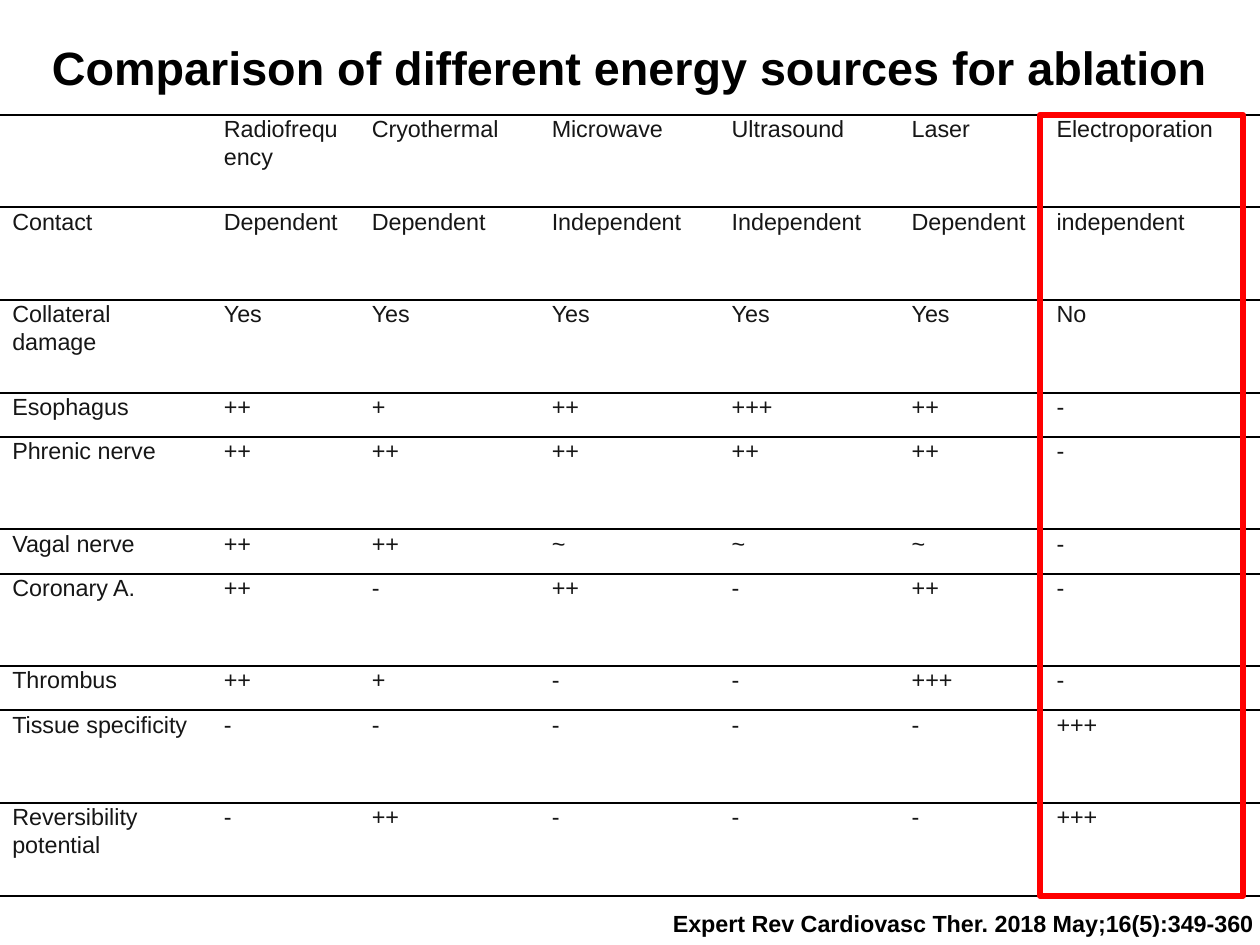
from lxml.etree import SubElement
from pptx import Presentation
from pptx.dml.color import RGBColor
from pptx.enum.shapes import MSO_SHAPE as Shape
from pptx.enum.text import MSO_ANCHOR as Anchor, PP_ALIGN as Align
from pptx.oxml.ns import qn
from pptx.util import Pt

NO_STYLE = "{2D5ABB26-0587-4C30-8999-92F81FD0307C}"
SLIDE_WIDTH, SLIDE_HEIGHT = 540, 405
TABLE_TOP = 49.2
TALL, SHORT = 39.7, 18.95
COLUMN_WIDTHS = [90.7, 63.4, 77.15, 77.15, 77.15, 62.1, 92.35]

# Row height, then the cells of the row
ROWS = [
    (TALL, ["", "Radiofrequency", "Cryothermal", "Microwave", "Ultrasound", "Laser", "Electroporation"]),
    (TALL, ["Contact", "Dependent", "Dependent", "Independent", "Independent", "Dependent", "independent"]),
    (TALL, ["Collateral damage", "Yes", "Yes", "Yes", "Yes", "Yes", "No"]),
    (SHORT, ["Esophagus", "++", "+", "++", "+++", "++", "-"]),
    (TALL, ["Phrenic nerve", "++", "++", "++", "++", "++", "-"]),
    (SHORT, ["Vagal nerve", "++", "++", "~", "~", "~", "-"]),
    (TALL, ["Coronary A.", "++", "-", "++", "-", "++", "-"]),
    (SHORT, ["Thrombus", "++", "+", "-", "-", "+++", "-"]),
    (TALL, ["Tissue specificity", "-", "-", "-", "-", "-", "+++"]),
    (TALL, ["Reversibility potential", "-", "++", "-", "-", "-", "+++"]),
]
TABLE_HEIGHT = sum(height for height, _ in ROWS)


def color(hex_string):
    return RGBColor.from_string(hex_string)


def style_paragraph(paragraph, size, hex_color, align, bold=False):
    paragraph.alignment = align
    font = paragraph.font
    font.name, font.size, font.bold = "Arial", Pt(size), bold
    font.color.rgb = color(hex_color)


def add_text(slide, text, left, top, width, height, size, align, anchor):
    box = slide.shapes.add_textbox(Pt(left), Pt(top), Pt(width), Pt(height))
    frame = box.text_frame
    frame.word_wrap = True
    frame.vertical_anchor = anchor
    frame.text = text
    style_paragraph(frame.paragraphs[0], size, "000000", align, bold=True)


def add_rules(cell):
    """Draw the lines above and below a cell."""
    properties = cell._tc.get_or_add_tcPr()
    for side in ("a:lnT", "a:lnB"):
        line = SubElement(properties, qn(side), w=str(Pt(1)))
        fill = SubElement(line, qn("a:solidFill"))
        SubElement(fill, qn("a:srgbClr"), val="000000")


def fill_cell(cell, text):
    cell.margin_left = cell.margin_right = Pt(5.3)
    cell.margin_top = cell.margin_bottom = 0
    cell.text = text
    paragraph = cell.text_frame.paragraphs[0]
    paragraph.line_spacing = 1.07
    style_paragraph(paragraph, 10, "161616", Align.JUSTIFY)
    add_rules(cell)
    cell.fill.background()


def add_comparison_table(slide):
    frame = slide.shapes.add_table(len(ROWS), len(COLUMN_WIDTHS), 0, Pt(TABLE_TOP),
                                   Pt(SLIDE_WIDTH), Pt(TABLE_HEIGHT))
    table = frame.table
    table.first_row = table.horz_banding = False
    table._tbl.tblPr.find(qn("a:tableStyleId")).text = NO_STYLE
    for column, width in zip(table.columns, COLUMN_WIDTHS):
        column.width = Pt(width)
    for row, (height, texts) in zip(table.rows, ROWS):
        row.height = Pt(height)
        for cell, text in zip(row.cells, texts):
            fill_cell(cell, text)


def add_highlight(slide, left, top, width, height):
    frame = slide.shapes.add_shape(Shape.RECTANGLE, Pt(left), Pt(top), Pt(width), Pt(height))
    frame.shadow.inherit = False
    frame.fill.background()
    frame.line.color.rgb = color("FF0000")
    frame.line.width = Pt(2.5)
    SubElement(frame.line._get_or_add_ln(), qn("a:round"))


def main():
    presentation = Presentation()
    presentation.slide_width, presentation.slide_height = Pt(SLIDE_WIDTH), Pt(SLIDE_HEIGHT)
    slide = presentation.slides.add_slide(presentation.slide_layouts[6])

    # Title
    add_text(slide, "Comparison of different energy sources for ablation",
             0, 5.2, SLIDE_WIDTH, 47, 20, Align.CENTER, Anchor.MIDDLE)
    # Comparison of the energy sources
    add_comparison_table(slide)
    # Reference
    add_text(slide, "Expert Rev Cardiovasc Ther. 2018 May;16(5):349-360",
             165, 386.2, 379, 26.6, 10, Align.RIGHT, Anchor.TOP)
    # Frame around the electroporation column
    add_highlight(slide, 445.7, TABLE_TOP, 87.1, TABLE_HEIGHT)

    presentation.save("out.pptx")


if __name__ == "__main__":
    main()
